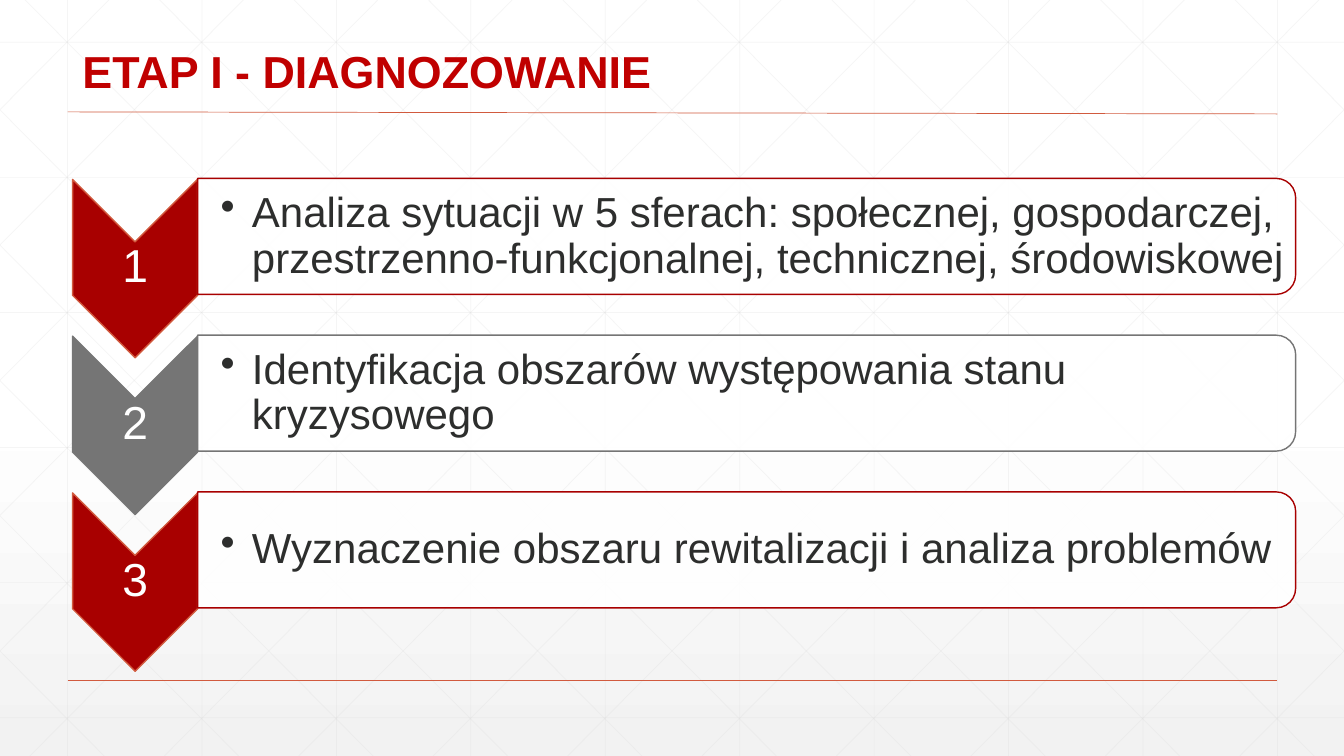
from copy import deepcopy
from dataclasses import dataclass

from lxml import etree
from pptx import Presentation
from pptx.dml.color import RGBColor
from pptx.enum.shapes import MSO_CONNECTOR, MSO_SHAPE
from pptx.enum.text import MSO_ANCHOR, PP_ALIGN
from pptx.oxml.ns import qn
from pptx.util import Inches, Pt

STRAIGHT = MSO_CONNECTOR.STRAIGHT
CHEVRON = MSO_SHAPE.CHEVRON
PANEL = MSO_SHAPE.ROUND_2_SAME_RECTANGLE
MIDDLE, BOTTOM = MSO_ANCHOR.MIDDLE, MSO_ANCHOR.BOTTOM
LEFT, CENTER = PP_ALIGN.LEFT, PP_ALIGN.CENTER

W, H = 13.33, 7.5
STEP_TOP, STEP_PITCH = 1.83, 1.555


@dataclass(frozen=True)
class Theme:
    font: str = "Arial"
    white: str = "FFFFFF"
    bg_end: str = "F2F2F2"
    grid: str = "D9D9D9"
    rule: str = "D15A3E"
    title: str = "C00000"
    red: str = "A80000"
    grey: str = "757575"
    body: str = "2D2E2D"
    title_size: int = 32
    number_size: int = 33
    body_size: int = 30


@dataclass(frozen=True)
class Step:
    text: str
    color: str
    edge: str


@dataclass(frozen=True)
class Box:
    left: float
    top: float
    width: float
    height: float


T = Theme()
STEPS = [
    Step("Analiza sytuacji w 5 sferach: społecznej, gospodarczej, "
         "przestrzenno-funkcjonalnej, technicznej, środowiskowej", T.red, T.rule),
    Step("Identyfikacja obszarów występowania stanu kryzysowego", T.grey, T.grey),
    Step("Wyznaczenie obszaru rewitalizacji i analiza problemów", T.red, T.rule),
]


def rgb(color: str) -> RGBColor:
    return RGBColor.from_string(color)


def set_alpha(parent, percent: int) -> None:
    for clr in parent.iter(qn("a:srgbClr")):
        etree.SubElement(clr, qn("a:alpha")).set("val", str(percent * 1000))


def add_background(s) -> None:
    fill = s.background.fill
    fill.gradient()
    fill.gradient_angle = 270
    stops = s._element.find(".//" + qn("a:gsLst"))
    stops.insert(1, deepcopy(stops[0]))
    looks = [(0, T.white), (0.53, T.white), (1, T.bg_end)]
    for stop, (position, color) in zip(fill.gradient_stops, looks):
        stop.position = position
        stop.color.rgb = rgb(color)
    set_alpha(stops[2], 65)


def add_line(s, x1: float, y1: float, x2: float, y2: float,
             color: str, width: float, alpha: int = 100) -> None:
    line = s.shapes.add_connector(
        STRAIGHT, Inches(x1), Inches(y1), Inches(x2), Inches(y2))
    line.line.color.rgb = rgb(color)
    line.line.width = Pt(width)
    props = line._element.spPr
    if alpha < 100:
        set_alpha(props, alpha)
    etree.SubElement(props, qn("a:effectLst"))


def add_grid(s) -> None:
    def grid_line(x1: float, y1: float, x2: float, y2: float) -> None:
        add_line(s, x1, y1, x2, y2, T.grid, 0.5, 25)

    for i in range(10):
        x = 0.67 + i * 4 / 3
        grid_line(x, 0, x, H)
    for i in range(6):
        y = 0.42 + i * 1.34
        grid_line(0, y, W, y)
    # Diagonals clipped to the slide, each with its mirror image
    slope = H / 7.45
    for i in range(-5, 10):
        start = 0.25 + i * 4 / 3
        x1, x2 = max(start, 0), min(start + 7.45, W)
        y1, y2 = (x1 - start) * slope, (x2 - start) * slope
        grid_line(x1, y1, x2, y2)
        grid_line(W - x1, y1, W - x2, y2)


def add_turned(s, kind, box: Box, fill: str, edge: str):
    """Draw a preset turned 90 degrees so that it covers the box."""
    left = box.left + (box.width - box.height) / 2
    top = box.top + (box.height - box.width) / 2
    sp = s.shapes.add_shape(kind, Inches(left), Inches(top),
                            Inches(box.height), Inches(box.width))
    sp.rotation = 90
    sp.shadow.inherit = False
    sp.fill.solid()
    sp.fill.fore_color.rgb = rgb(fill)
    sp.line.color.rgb = rgb(edge)
    sp.line.width = Pt(1)
    return sp


def add_text(s, box: Box, text: str, size: int, color: str, anchor=MIDDLE,
             align=LEFT, left_inset: float = 0.02, inset: float = 0.02,
             bold: bool = False):
    tb = s.shapes.add_textbox(Inches(box.left), Inches(box.top),
                              Inches(box.width), Inches(box.height))
    tf = tb.text_frame
    tf.word_wrap = True
    tf.vertical_anchor = anchor
    tf.margin_left = Inches(left_inset)
    tf.margin_top = tf.margin_right = tf.margin_bottom = Inches(inset)
    p = tf.paragraphs[0]
    p.alignment = align
    p.line_spacing = 0.9
    r = p.add_run()
    r.text = text
    r.font.name = T.font
    r.font.size = Pt(size)
    r.font.bold = bold
    r.font.color.rgb = rgb(color)
    return p


def add_bullet(p) -> None:
    props = p._p.get_or_add_pPr()
    props.set("marL", str(Inches(0.31)))
    props.set("indent", str(-Inches(0.31)))
    etree.SubElement(props, qn("a:buChar")).set("char", "•")


def add_step(s, number: int, step: Step) -> None:
    top = STEP_TOP + (number - 1) * STEP_PITCH
    # Numbered arrow
    add_turned(s, CHEVRON, Box(0.72, top - 0.05, 1.24, 1.77), step.color, step.edge)
    add_text(s, Box(0.72, top + 0.56, 1.24, 0.53), str(number),
             T.number_size, T.white, align=CENTER)
    # Description panel
    panel = add_turned(s, PANEL, Box(1.96, top - 0.06, 10.89, 1.15), T.white, step.color)
    set_alpha(panel._element.spPr.find(qn("a:solidFill")), 90)
    p = add_text(s, Box(1.96, top, 10.83, 1.04), step.text,
                 T.body_size, T.body, left_inset=0.23)
    add_bullet(p)


def main() -> None:
    prs = Presentation()
    prs.slide_width, prs.slide_height = Inches(W), Inches(H)
    s = prs.slides.add_slide(prs.slide_layouts[6])

    # Backdrop and rules
    add_background(s)
    add_grid(s)
    add_line(s, 0.67, 6.75, 12.67, 6.75, T.rule, 1)
    add_line(s, 0.67, 1.11, 12.67, 1.13, T.rule, 0.5)

    # Title and steps
    add_text(s, Box(0.72, 0.37, 10.5, 0.65), "ETAP I - DIAGNOZOWANIE", T.title_size,
             T.title, anchor=BOTTOM, left_inset=0.1, inset=0.05, bold=True)
    for number, step in enumerate(STEPS, 1):
        add_step(s, number, step)

    prs.save("out.pptx")


if __name__ == "__main__":
    main()
